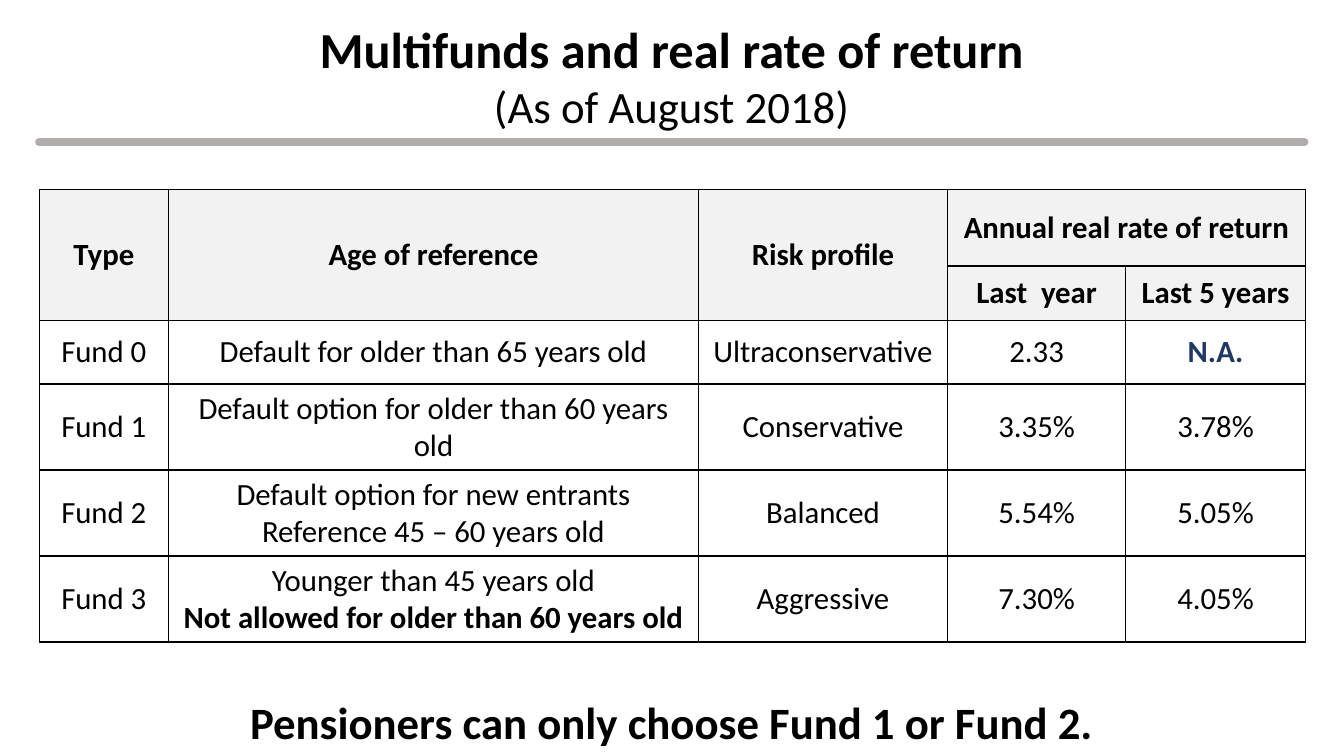
from lxml.etree import SubElement
from pptx import Presentation
from pptx.dml.color import RGBColor
from pptx.enum.shapes import MSO_CONNECTOR
from pptx.enum.text import MSO_ANCHOR, PP_ALIGN
from pptx.oxml.ns import qn
from pptx.util import Pt

FONT = "Calibri"
BLACK, NAVY, RULE_GREY, HEADER_GREY = "000000", "203864", "B0ACAB", "F2F2F2"
LEFT, WIDTH = 28.08, 903.6

TITLE = [("Multifunds and real rate of return", 36, True), ("(As of August 2018)", 32, False)]
CONCLUSION = [("Pensioners can only choose Fund 1 or Fund 2.", 32, True)]
ROWS = [
    ["Type", "Age of reference", "Risk profile", "Annual real rate of return", ""],
    ["", "", "", "Last  year", "Last 5 years"],
    ["Fund 0", "Default for older than 65 years old", "Ultraconservative", "2.33", "N.A."],
    ["Fund 1", "Default option for older than 60 years old", "Conservative", "3.35%", "3.78%"],
    ["Fund 2", "Default option for new entrants\nReference 45 – 60 years old", "Balanced", "5.54%", "5.05%"],
    ["Fund 3", "Younger than 45 years old\nNot allowed for older than 60 years old", "Aggressive", "7.30%", "4.05%"],
]
HEADER_ROWS = 2
MERGES = [((0, 0), (1, 0)), ((0, 1), (1, 1)), ((0, 2), (1, 2)), ((0, 3), (0, 4))]
BOLD_LINES = {"N.A.", "Not allowed for older than 60 years old"}
LINE_COLORS = {"N.A.": NAVY}
COLUMN_WIDTHS = [92.16, 378.72, 177.84, 127.44, 128.16]
ROW_HEIGHTS = [54.72, 38.88, 45.36, 45.36, 45.36, 43.92]


def rgb(value):
    return RGBColor.from_string(value)


def write(frame, lines):
    frame.word_wrap = True
    frame.text = "\n".join(text for text, size, bold in lines)
    for paragraph, (text, size, bold) in zip(frame.paragraphs, lines):
        paragraph.alignment = PP_ALIGN.CENTER
        font = paragraph.font
        font.name, font.size, font.bold = FONT, Pt(size), bold
        font.color.rgb = rgb(LINE_COLORS.get(text, BLACK))


def add_text(slide, left, top, width, height, lines):
    box = slide.shapes.add_textbox(Pt(left), Pt(top), Pt(width), Pt(height))
    write(box.text_frame, lines)


def add_borders(cell):
    properties = cell._tc.get_or_add_tcPr()
    for side in ("a:lnL", "a:lnR", "a:lnT", "a:lnB"):
        line = SubElement(properties, qn(side), w=str(Pt(1)))
        fill = SubElement(line, qn("a:solidFill"))
        SubElement(fill, qn("a:srgbClr"), val=BLACK)


def add_fund_table(slide):
    frame = slide.shapes.add_table(len(ROWS), len(COLUMN_WIDTHS), Pt(LEFT), Pt(135.36),
                                   Pt(WIDTH), Pt(sum(ROW_HEIGHTS)))
    table = frame.table
    table.first_row = table.horz_banding = False
    for column, width in zip(table.columns, COLUMN_WIDTHS):
        column.width = Pt(width)
    for row, height in zip(table.rows, ROW_HEIGHTS):
        row.height = Pt(height)
    for row_index, texts in enumerate(ROWS):
        header = row_index < HEADER_ROWS
        for column_index, text in enumerate(texts):
            cell = table.cell(row_index, column_index)
            cell.vertical_anchor = MSO_ANCHOR.MIDDLE
            cell.margin_left = cell.margin_right = Pt(8.64)
            cell.margin_top = cell.margin_bottom = Pt(4.32)
            add_borders(cell)
            if header:
                cell.fill.solid()
                cell.fill.fore_color.rgb = rgb(HEADER_GREY)
            else:
                cell.fill.background()
            write(cell.text_frame, [(line, 22, header or line in BOLD_LINES) for line in text.split("\n")])
    for start, end in MERGES:
        table.cell(*start).merge(table.cell(*end))


def add_rule(slide, top):
    rule = slide.shapes.add_connector(MSO_CONNECTOR.STRAIGHT, Pt(LEFT), Pt(top), Pt(LEFT + WIDTH), Pt(top))
    rule.line.color.rgb = rgb(RULE_GREY)
    rule.line.width = Pt(6)
    rule.line._get_or_add_ln().set("cap", "rnd")
    SubElement(rule._element.spPr, qn("a:effectLst"))


def main():
    presentation = Presentation()
    presentation.slide_width, presentation.slide_height = Pt(960), Pt(540)
    slide = presentation.slides.add_slide(presentation.slide_layouts[6])
    add_text(slide, 88.56, 9.36, 782.64, 90, TITLE)
    add_fund_table(slide)
    add_text(slide, LEFT, 492.48, WIDTH, 46.08, CONCLUSION)
    add_rule(slide, 101.52)
    presentation.save("out.pptx")


if __name__ == "__main__":
    main()
